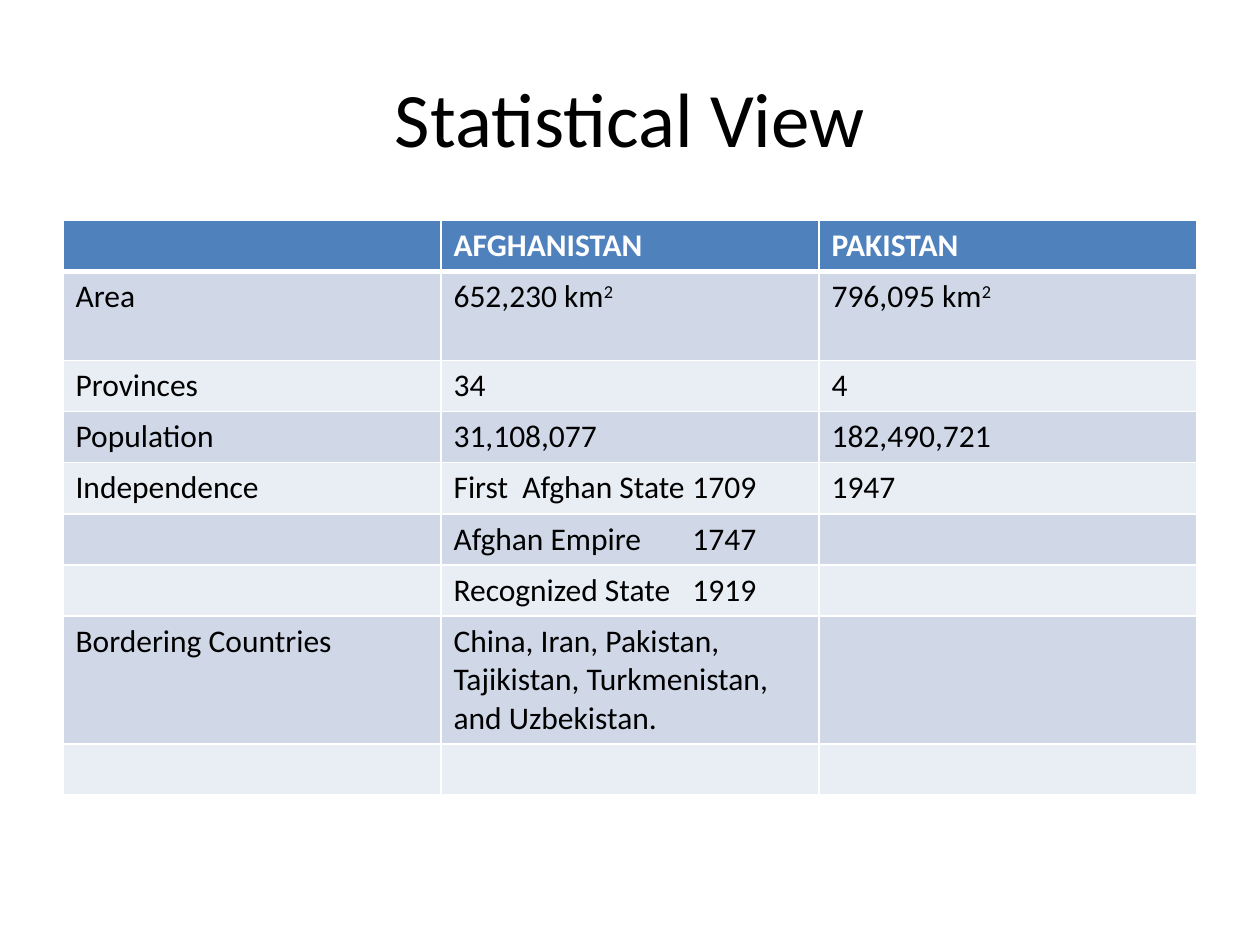
from lxml import etree
from pptx import Presentation
from pptx.dml.color import RGBColor
from pptx.enum.text import MSO_ANCHOR, PP_ALIGN
from pptx.oxml.ns import qn
from pptx.util import Pt

CENTER = PP_ALIGN.CENTER
MIDDLE = MSO_ANCHOR.MIDDLE
TITLE_ONLY = 5

FONT = "Calibri"
COLORS = {
    "text": "000000",
    "header": "4F81BD",
    "header_text": "FFFFFF",
    "border": "FFFFFF",
    "odd_band": "D0D8E8",
    "even_band": "E9EDF4",
}
TITLE_FORMAT = {"name": FONT, "size": Pt(44), "bold": False}
HEADER_FORMAT = {"name": FONT, "size": Pt(18), "bold": True}
BODY_FORMAT = {"name": FONT, "size": Pt(18), "bold": False}

COLUMN_WIDTH = 216
ROW_HEIGHT = 29.2
TALL_ROWS = {1: 50.8, 7: 73.2}
YEAR_TAB = 136.5
SUPERSCRIPT_MARK = "^"

STATISTICS = [
    ("", "AFGHANISTAN", "PAKISTAN"),
    ("Area", "652,230 km^2", "796,095 km^2"),
    ("Provinces", "34", "4"),
    ("Population", "31,108,077", "182,490,721"),
    ("Independence", "First  Afghan State\t1709", "1947"),
    ("", "Afghan Empire\t1747", ""),
    ("", "Recognized State\t1919", ""),
    ("Bordering Countries",
     "China, Iran, Pakistan, Tajikistan, Turkmenistan, and Uzbekistan.", ""),
    ("", "", ""),
]


def rgb(color):
    return RGBColor.from_string(COLORS[color])


def add_run(paragraph, text, font_format, color):
    run = paragraph.add_run()
    run.text = text
    for attribute, value in font_format.items():
        setattr(run.font, attribute, value)
    run.font.color.rgb = rgb(color)
    return run


def add_title(slide, text):
    title = slide.shapes.title
    placement = {"left": 36, "top": 21.6, "width": 648, "height": 90}
    for attribute, value in placement.items():
        setattr(title, attribute, Pt(value))
    title.text_frame.vertical_anchor = MIDDLE
    heading = title.text_frame.paragraphs[0]
    heading.alignment = CENTER
    add_run(heading, text, TITLE_FORMAT, "text")


def set_year_tab(paragraph):
    """Line the years up at one left tab stop."""
    stops = etree.SubElement(paragraph._p.get_or_add_pPr(), qn("a:tabLst"))
    etree.SubElement(stops, qn("a:tab"), pos=str(Pt(YEAR_TAB)), algn="l")


def set_borders(cell, widths):
    """Draw the left, right, top and bottom borders, with widths in points."""
    properties = cell._tc.get_or_add_tcPr()
    for position, (side, width) in enumerate(zip("LRTB", widths)):
        border = etree.Element(qn(f"a:ln{side}"), w=str(Pt(width)))
        fill = etree.SubElement(border, qn("a:solidFill"))
        etree.SubElement(fill, qn("a:srgbClr"), val=COLORS["border"])
        properties.insert(position, border)


def write_cell(cell, content, font_format, color):
    """Write the content, raising what follows the superscript mark."""
    paragraph = cell.text_frame.paragraphs[0]
    if "\t" in content:
        set_year_tab(paragraph)
    base, _, exponent = content.partition(SUPERSCRIPT_MARK)
    if base:
        add_run(paragraph, base, font_format, color)
    if exponent:
        raised = add_run(paragraph, exponent, font_format, color)
        raised._r.get_or_add_rPr().set("baseline", "30000")


def add_statistics_table(slide, rows):
    heights = [TALL_ROWS.get(index, ROW_HEIGHT) for index in range(len(rows))]
    column_count = len(rows[0])
    table = slide.shapes.add_table(
        len(rows), column_count, Pt(36), Pt(126),
        Pt(COLUMN_WIDTH * column_count), Pt(sum(heights))).table
    for column in table.columns:
        column.width = Pt(COLUMN_WIDTH)

    for index, (contents, height) in enumerate(zip(rows, heights)):
        table.rows[index].height = Pt(height)
        if index == 0:
            band, font_format, color = "header", HEADER_FORMAT, "header_text"
        else:
            band = "odd_band" if index % 2 else "even_band"
            font_format, color = BODY_FORMAT, "text"
        top = 3 if index == 1 else 1
        bottom = 3 if index == 0 else 1
        for cell, content in zip(table.rows[index].cells, contents):
            cell.fill.solid()
            cell.fill.fore_color.rgb = rgb(band)
            set_borders(cell, (1, 1, top, bottom))
            write_cell(cell, content, font_format, color)


def main():
    deck = Presentation()
    deck.slide_width, deck.slide_height = Pt(720), Pt(540)
    slide = deck.slides.add_slide(deck.slide_layouts[TITLE_ONLY])
    add_title(slide, "Statistical View")
    add_statistics_table(slide, STATISTICS)
    deck.save("out.pptx")


if __name__ == "__main__":
    main()
